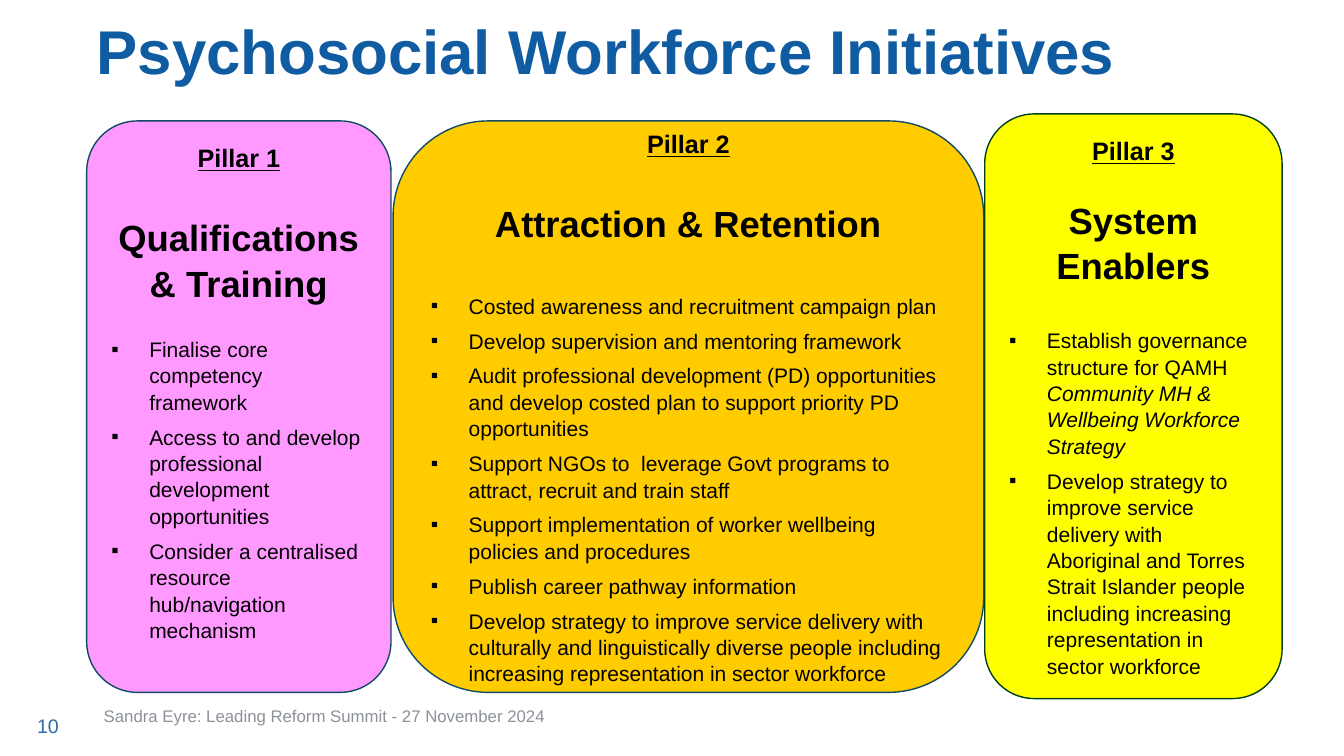
from lxml import etree
from pptx import Presentation
from pptx.dml.color import RGBColor
from pptx.enum.shapes import MSO_SHAPE
from pptx.enum.text import MSO_ANCHOR, PP_ALIGN
from pptx.oxml.ns import qn
from pptx.util import Pt

ROUNDED = MSO_SHAPE.ROUNDED_RECTANGLE
TOP, MIDDLE = MSO_ANCHOR.TOP, MSO_ANCHOR.MIDDLE
CENTER, LEFT = PP_ALIGN.CENTER, PP_ALIGN.LEFT

COLORS = {
    "title": "0F5CA2", "footer": "8C919A", "number": "2E6AA5", "text": "000000",
    "pink": "FF99FF", "orange": "FFCC00", "yellow": "FFFF00",
    "teal": "114B63", "green": "00401F",
}
LINE_SPACING = 1.05
BULLET_GAP = 6
BULLET_INDENT = Pt(27)


def rgb(name):
    return RGBColor.from_string(COLORS[name])


def add_run(paragraph, text, color="text", **font_format):
    run = paragraph.add_run()
    run.text = text
    run.font.name = "Arial"
    run.font.color.rgb = rgb(color)
    for attribute, value in font_format.items():
        setattr(run.font, attribute, value)


prs = Presentation()
prs.slide_width, prs.slide_height = Pt(960), Pt(540)
slide = prs.slides.add_slide(prs.slide_layouts[6])

# Title, footer and slide number: text, color, box, font
labels = [
    ("Psychosocial Workforce Initiatives", "title", (61.9, 0, 828, 71),
     {"size": Pt(44.1), "bold": True}),
    ("Sandra Eyre: Leading Reform Summit - 27 November 2024", "footer",
     (67, 497, 466, 28.8), {"size": Pt(12)}),
    ("10", "number", (19.4, 504, 73.4, 28.8), {"size": Pt(14)}),
]
for text, color, box, font_format in labels:
    frame = slide.shapes.add_textbox(*[Pt(v) for v in box]).text_frame
    frame.word_wrap = True
    frame.vertical_anchor = MIDDLE
    add_run(frame.paragraphs[0], text, color, **font_format)

# Pillars: "gaps" are the spaces above and below the heading;
# each bullet lists its parts, alternately upright and italic
pillars = [
    {"label": "Pillar 1", "heading": "Qualifications & Training",
     "box": (61.9, 86.4, 217.4, 408.2), "fill": "pink", "line": "teal",
     "anchor": TOP, "gaps": (29, 21.7),
     "bullets": [
         ["Finalise core competency framework"],
         ["Access to and develop professional development opportunities"],
         ["Consider a centralised resource hub/navigation mechanism"]]},
    {"label": "Pillar 2", "heading": "Attraction & Retention",
     "box": (280.8, 86.4, 421.9, 408.2), "fill": "orange", "line": "teal",
     "anchor": MIDDLE, "gaps": (28.4, 33.9),
     "bullets": [
         ["Costed awareness and recruitment campaign plan"],
         ["Develop supervision and mentoring framework"],
         ["Audit professional development (PD) opportunities and develop "
          "costed plan to support priority PD opportunities"],
         ["Support NGOs to  leverage Govt programs to attract, recruit "
          "and train staff"],
         ["Support implementation of worker wellbeing policies and procedures"],
         ["Publish career pathway information"],
         ["Develop strategy to improve service delivery with culturally and "
          "linguistically diverse people including increasing "
          "representation in sector workforce"]]},
    {"label": "Pillar 3", "heading": "System Enablers",
     "box": (703.4, 81.4, 212.4, 417.6), "fill": "yellow", "line": "green",
     "anchor": MIDDLE, "gaps": (21.2, 28),
     "bullets": [
         ["Establish governance structure for QAMH ",
          "Community MH & Wellbeing Workforce Strategy"],
         ["Develop strategy to improve service delivery with Aboriginal and "
          "Torres Strait Islander people including increasing "
          "representation in sector workforce"]]},
]
for pillar in pillars:
    panel = slide.shapes.add_shape(ROUNDED, *[Pt(v) for v in pillar["box"]])
    panel.shadow.inherit = False
    panel.fill.solid()
    panel.fill.fore_color.rgb = rgb(pillar["fill"])
    panel.line.color.rgb = rgb(pillar["line"])
    panel.line.width = Pt(1)
    frame = panel.text_frame
    frame.word_wrap = True
    frame.vertical_anchor = pillar["anchor"]

    # Label and heading
    label = frame.paragraphs[0]
    label.alignment = CENTER
    label.line_spacing = LINE_SPACING
    add_run(label, pillar["label"], size=Pt(18), bold=True, underline=True)
    heading = frame.add_paragraph()
    heading.alignment = CENTER
    heading.line_spacing = LINE_SPACING
    heading.space_before, heading.space_after = [Pt(g) for g in pillar["gaps"]]
    add_run(heading, pillar["heading"], size=Pt(26), bold=True)

    # Bullets
    for index, parts in enumerate(pillar["bullets"]):
        bullet = frame.add_paragraph()
        bullet.alignment = LEFT
        bullet.line_spacing = LINE_SPACING
        bullet.space_before = Pt(BULLET_GAP if index else 0)
        properties = bullet._p.get_or_add_pPr()
        properties.set("marL", str(BULLET_INDENT))
        properties.set("indent", str(-BULLET_INDENT))
        etree.SubElement(properties, qn("a:buFont")).set("typeface", "Arial")
        etree.SubElement(properties, qn("a:buChar")).set("char", "▪")
        for position, part in enumerate(parts):
            add_run(bullet, part, size=Pt(15), italic=position % 2 == 1)

prs.save("out.pptx")
